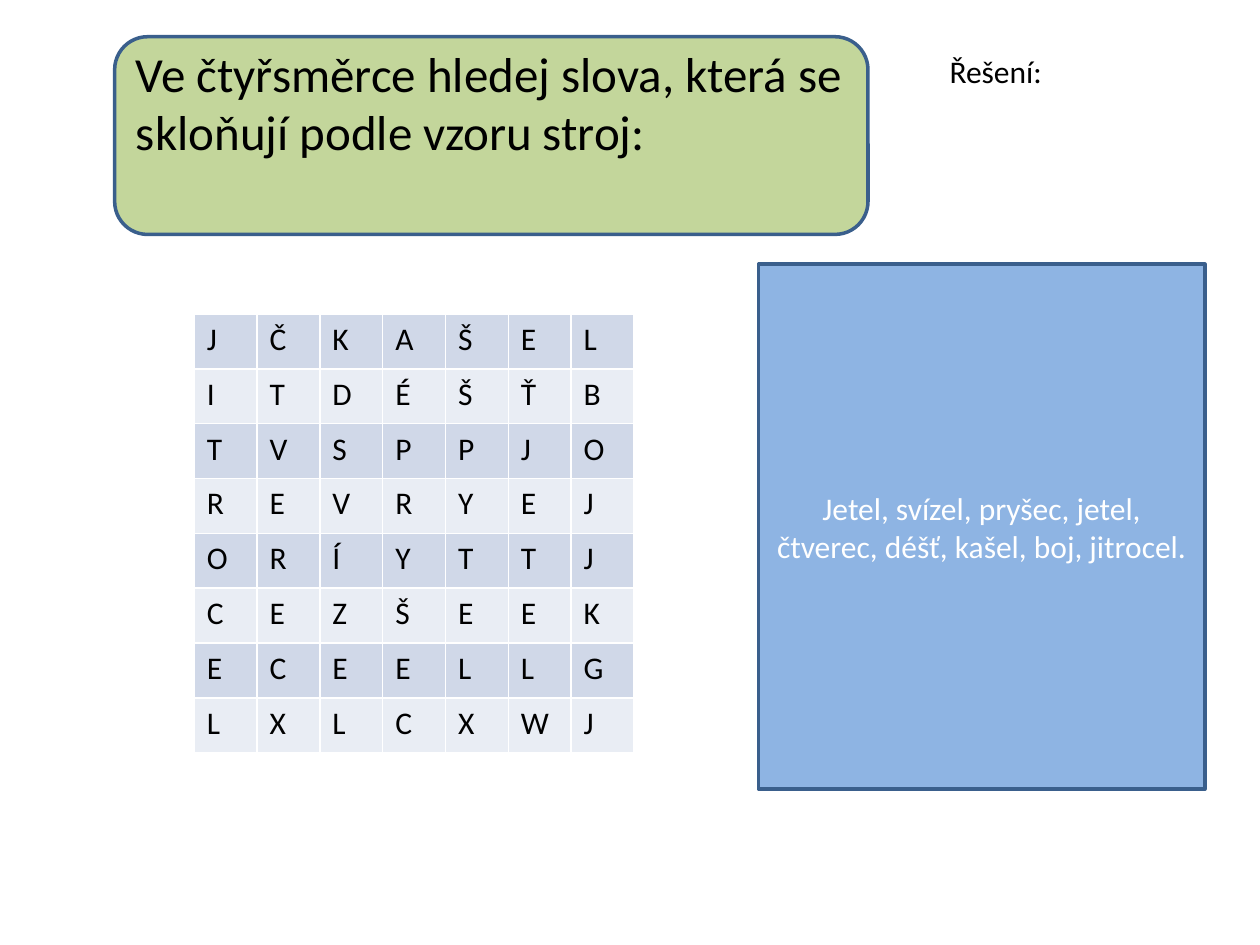
"""Build a Czech word-search slide with its solution panel."""
from dataclasses import dataclass

from pptx import Presentation
from pptx import util as u
from pptx.dml.color import RGBColor
from pptx.enum import shapes, text


@dataclass(frozen=True)
class Theme:
    font: str = "Calibri"
    title_size: float = 28
    body_size: float = 18
    line_width: float = 2
    ink: str = "000000"
    paper: str = "FFFFFF"
    outline: str = "3A5F8C"
    heading_fill: str = "C3D69B"
    solution_fill: str = "8EB4E3"
    bands: tuple[str, str] = ("D0D8E8", "E9EDF4")


@dataclass(frozen=True)
class Box:
    left: float
    top: float
    width: float
    height: float

    def lengths(self) -> tuple[u.Length, ...]:
        return tuple(u.Pt(n) for n in (self.left, self.top, self.width, self.height))


@dataclass(frozen=True)
class Panel:
    kind: shapes.MSO_SHAPE
    box: Box
    fill: str


THEME = Theme()
HEADING_PANEL = Panel(shapes.MSO_SHAPE.ROUNDED_RECTANGLE, Box(65.5, 21, 430.5, 113), THEME.heading_fill)
SOLUTION_PANEL = Panel(shapes.MSO_SHAPE.RECTANGLE, Box(433.5, 151, 255, 300), THEME.solution_fill)
TITLE_BOX = Box(70.5, 21, 471, 75)
LABEL_BOX = Box(535.5, 26, 85, 29)
GRID_BOX = Box(111, 179.5, 251.3, 250.6)
LETTERS = ("JČKAŠEL", "ITDÉŠŤB", "TVSPPJO", "REVRYEJ", "ORÍYTTJ", "CEZŠEEK", "ECEELLG", "LXLCXWJ")
TITLE = "Ve čtyřsměrce hledej slova, která se skloňují podle vzoru stroj:"
SOLUTION = "Jetel, svízel, pryšec, jetel, čtverec, déšť, kašel, boj, jitrocel."


def write(frame, words: str, size: float = THEME.body_size, color: str = THEME.ink,
          align=text.PP_ALIGN.LEFT, anchor=text.MSO_ANCHOR.TOP) -> None:
    """Fill a text frame with one formatted paragraph."""
    frame.text = words
    frame.word_wrap = True
    frame.auto_size = text.MSO_AUTO_SIZE.NONE
    frame.vertical_anchor = anchor
    style(frame.paragraphs[0], size, color, align)


def style(paragraph, size: float, color: str, align) -> None:
    """Format a paragraph."""
    paragraph.alignment = align
    paragraph.font.name = THEME.font
    paragraph.font.size = u.Pt(size)
    paragraph.font.color.rgb = RGBColor.from_string(color)


def draw_panel(slide, panel: Panel):
    """Draw an outlined, filled panel."""
    shape = slide.shapes.add_shape(panel.kind, *panel.box.lengths())
    shape.shadow.inherit = False
    shape.fill.solid()
    shape.fill.fore_color.rgb = RGBColor.from_string(panel.fill)
    shape.line.color.rgb = RGBColor.from_string(THEME.outline)
    shape.line.width = u.Pt(THEME.line_width)
    return shape


def draw_grid(slide, letters: tuple[str, ...], box: Box) -> None:
    """Draw the letter grid with alternating row fills."""
    table = slide.shapes.add_table(len(letters), len(letters[0]), *box.lengths()).table
    table.first_row = False
    for column in table.columns:
        column.width = u.Pt(box.width / len(letters[0]))
    for index, (row, word) in enumerate(zip(table.rows, letters)):
        row.height = u.Pt(box.height / len(letters))
        for cell, letter in zip(row.cells, word):
            cell.fill.solid()
            cell.fill.fore_color.rgb = RGBColor.from_string(THEME.bands[index % 2])
            cell.text = letter
            style(cell.text_frame.paragraphs[0], THEME.body_size, THEME.ink, text.PP_ALIGN.LEFT)


def main() -> None:
    """Create and save the slide."""
    presentation = Presentation()
    presentation.slide_width, presentation.slide_height = u.Pt(720), u.Pt(540)
    slide = presentation.slides.add_slide(presentation.slide_layouts[5])
    title = slide.shapes.title
    title.left, title.top, title.width, title.height = TITLE_BOX.lengths()
    write(title.text_frame, TITLE, THEME.title_size)
    heading = draw_panel(slide, HEADING_PANEL)
    title.element.addprevious(heading.element)
    draw_grid(slide, LETTERS, GRID_BOX)
    solution = draw_panel(slide, SOLUTION_PANEL)
    write(solution.text_frame, SOLUTION, color=THEME.paper,
          align=text.PP_ALIGN.CENTER, anchor=text.MSO_ANCHOR.MIDDLE)
    label = slide.shapes.add_textbox(*LABEL_BOX.lengths())
    write(label.text_frame, "Řešení:")
    presentation.save("out.pptx")


if __name__ == "__main__":
    main()
